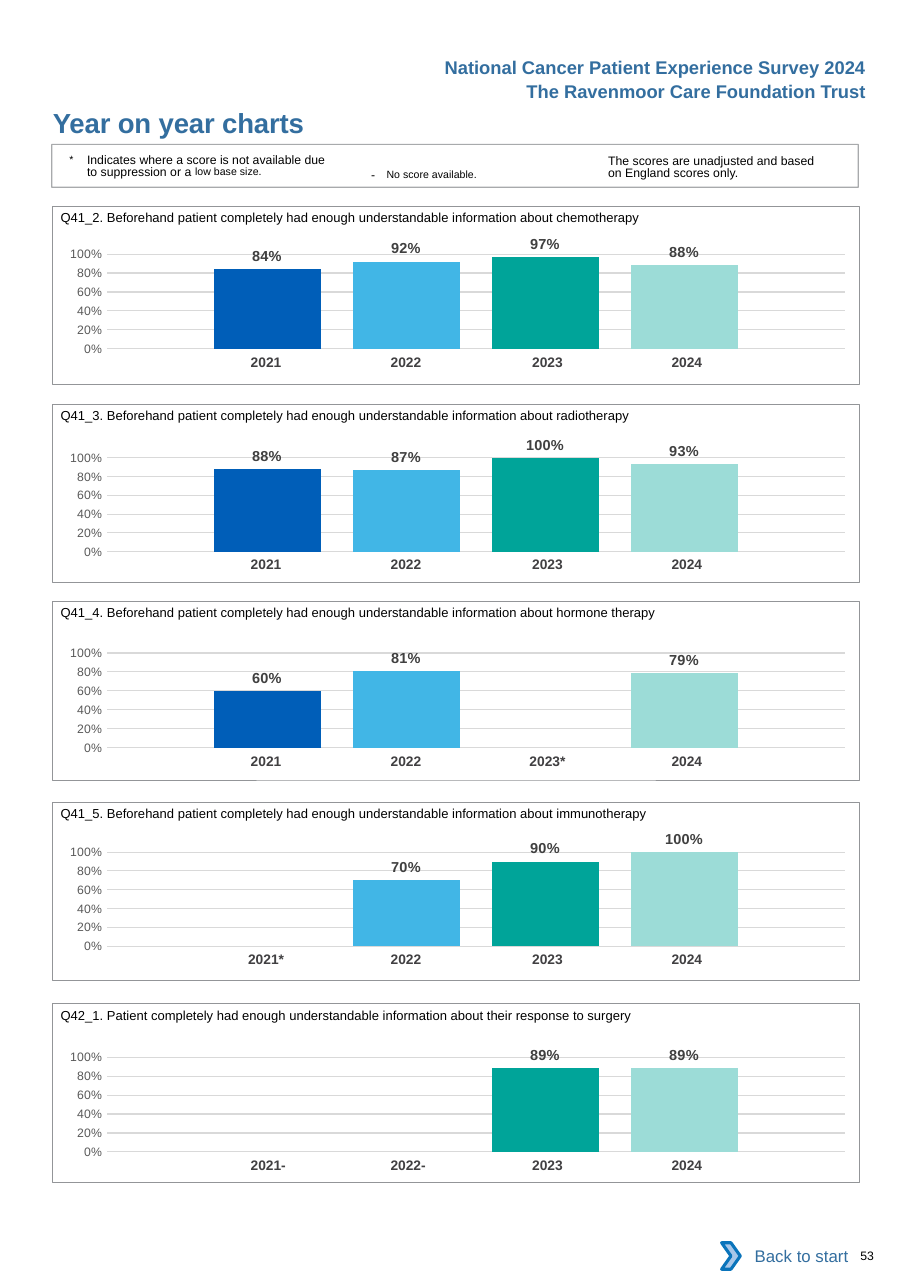
from lxml import etree
from pptx import Presentation
from pptx import util as u
from pptx.chart.data import CategoryChartData
from pptx.dml.color import RGBColor
from pptx.enum import chart as charts
from pptx.enum import shapes, text
from pptx.oxml import parse_xml
from pptx.oxml.ns import nsdecls, qn

BLACK = RGBColor(0x00, 0x00, 0x00)
WHITE = RGBColor(0xFF, 0xFF, 0xFF)
HEADING = RGBColor(0x33, 0x6E, 0x9F)
FRAME = RGBColor(0x93, 0x95, 0x98)
YEAR = RGBColor(0x41, 0x40, 0x42)
AXIS = RGBColor(0x59, 0x59, 0x59)
LABEL = RGBColor(0x40, 0x40, 0x40)
GRID = RGBColor(0xD9, 0xD9, 0xD9)
CHEVRON_FILL = RGBColor(0xA8, 0xC7, 0xE9)
CHEVRON_LINE = RGBColor(0x0A, 0x74, 0xBB)
BAR_COLORS = [RGBColor(0x00, 0x5E, 0xB8), RGBColor(0x41, 0xB6, 0xE6),
              RGBColor(0x00, 0xA4, 0x99), RGBColor(0x9C, 0xDC, 0xD7)]

FRAME_LEFT, FRAME_WIDTH, FRAME_HEIGHT = 0.48, 7.32, 1.62
CHART_LEFT, CHART_HEIGHT = 0.39, 1.29
YEARS_OFFSET = 1.05  # from the top of a chart to its row of years
YEAR_WIDTHS = [1.27, 1.27, 1.34, 1.27]
YEAR_RIGHT_INSETS = [0, 0, 0.04, 0.12]
PLOT = {"x": 0.079, "y": 0.145, "w": 0.915, "h": 0.666}

BEFOREHAND = "Beforehand patient completely had enough understandable information about "
# question, frame top, chart top, years, scores
PANELS = [
    ("Q41_2. " + BEFOREHAND + "chemotherapy", 1.87, 2.12,
     ["2021", "2022", "2023", "2024"], [0.84, 0.92, 0.97, 0.88]),
    ("Q41_3. " + BEFOREHAND + "radiotherapy", 3.67, 3.96,
     ["2021", "2022", "2023", "2024"], [0.88, 0.87, 1, 0.93]),
    ("Q41_4. " + BEFOREHAND + "hormone therapy", 5.46, 5.74,
     ["2021", "2022", "2023*", "2024"], [0.6, 0.81, None, 0.79]),
    ("Q41_5. " + BEFOREHAND + "immunotherapy", 7.28, 7.54,
     ["2021*", "2022", "2023", "2024"], [None, 0.7, 0.9, 1]),
    ("Q42_1. Patient completely had enough understandable information "
     "about their response to surgery", 9.11, 9.41,
     ["2021-", "2022-", "2023", "2024"], [None, None, 0.89, 0.89]),
]


def inches(*lengths):
    return [u.Inches(length) for length in lengths]


def set_insets(frame, insets):
    (frame.margin_left, frame.margin_top,
     frame.margin_right, frame.margin_bottom) = inches(*insets)


def style_font(font, size, color, bold=False):
    font.name = "Arial"
    font.size = u.Pt(size)
    font.bold = bold
    font.color.rgb = color


def add_span(para, words, size, color, bold=False, raised=0, spacing=0):
    """Add a run; raised is in percent and spacing in points."""
    span = para.add_run()
    span.text = words
    style_font(span.font, size, color, bold)
    properties = span.font._element
    if raised:
        properties.set("baseline", str(raised * 1000))
    if spacing:
        properties.set("spc", str(round(spacing * 100)))


def add_text(page, place, spans, insets=(0, 0, 0, 0),
             align=text.PP_ALIGN.LEFT, line_points=None, hanging=0):
    """Add a one-paragraph text box; each span holds the arguments of add_span."""
    box = page.shapes.add_textbox(*inches(*place))
    frame = box.text_frame
    frame.word_wrap = True
    set_insets(frame, insets)
    para = frame.paragraphs[0]
    para.alignment = align
    if line_points:
        para.line_spacing = u.Pt(line_points)
    if hanging:
        properties = para._p.get_or_add_pPr()
        properties.set("marL", str(u.Inches(hanging)))
        properties.set("indent", str(-u.Inches(hanging)))
    for span in spans:
        add_span(para, *span)


def add_shape(page, kind, place, fill=None, line=None, line_width=0.5):
    shape = page.shapes.add_shape(kind, *inches(*place))
    shape.shadow.inherit = False
    if fill is None:
        shape.fill.background()
    else:
        shape.fill.solid()
        shape.fill.fore_color.rgb = fill
    if line is None:
        shape.line.fill.background()
    else:
        shape.line.color.rgb = line
        shape.line.width = u.Pt(line_width)
    return shape


def place_plot(chart):
    """Fix the inner plot area at its share of the chart."""
    area = chart._chartSpace.chart.plotArea
    for layout in area.findall(qn("c:layout")):
        area.remove(layout)
    edges = "".join(f'<c:{side}Mode val="edge"/>' for side in "xy")
    shares = "".join(f'<c:{side} val="{share}"/>' for side, share in PLOT.items())
    area.insert(0, parse_xml(
        f'<c:layout {nsdecls("c")}><c:manualLayout><c:layoutTarget val="inner"/>'
        f'{edges}{shares}</c:manualLayout></c:layout>'))


def add_score_chart(page, top, scores):
    data = CategoryChartData(number_format="0%")
    data.categories = ["1"]
    for number, score in enumerate(scores, 1):
        data.add_series(f"Series {number}", [score])
    chart = page.shapes.add_chart(
        charts.XL_CHART_TYPE.COLUMN_CLUSTERED,
        *inches(CHART_LEFT, top, FRAME_WIDTH, CHART_HEIGHT), data).chart
    chart.has_legend = False
    chart.has_title = False
    chart.font.name = "Calibri"
    chart.font.size = u.Pt(10)
    chart.font.color.rgb = BLACK
    chart.category_axis.visible = False

    axis = chart.value_axis
    axis.minimum_scale, axis.maximum_scale, axis.major_unit = 0, 1, 0.2
    axis.major_tick_mark = charts.XL_TICK_MARK.NONE
    axis.format.line.fill.background()
    axis.major_gridlines.format.line.color.rgb = GRID
    axis.major_gridlines.format.line.width = u.Pt(0.75)
    axis.tick_labels.number_format = "0%"
    axis.tick_labels.number_format_is_linked = False
    style_font(axis.tick_labels.font, 8, AXIS)

    plot = chart.plots[0]
    plot.vary_by_categories = False
    plot.gap_width, plot.overlap = 200, -30
    for series, color in zip(plot.series, BAR_COLORS):
        series.format.fill.solid()
        series.format.fill.fore_color.rgb = color
        labels = series.data_labels
        labels.show_value = True
        labels.position = charts.XL_LABEL_POSITION.OUTSIDE_END
        labels.number_format = "0%"
        labels.number_format_is_linked = False
        style_font(labels.font, 9.5, LABEL, True)
    place_plot(chart)


def add_years(page, top, years):
    table = page.shapes.add_table(
        1, len(years), *inches(1.73, top, sum(YEAR_WIDTHS), 0.27)).table
    table.first_row = table.horz_banding = False
    style = table._tbl.tblPr.find(qn("a:tableStyleId"))
    style.text = "{2D5ABB26-0587-4C30-8999-92F81FD0307C}"  # no style, no grid
    for index, year in enumerate(years):
        table.columns[index].width = u.Inches(YEAR_WIDTHS[index])
        cell = table.cell(0, index)
        cell.fill.background()
        left = 0.14 if year.endswith("-") else 0.1
        set_insets(cell, (left, 0.05, YEAR_RIGHT_INSETS[index], 0.05))
        para = cell.text_frame.paragraphs[0]
        para.alignment = text.PP_ALIGN.CENTER
        add_span(para, year, 9, YEAR, True)


def add_panel(page, question, frame_top, chart_top, years, scores):
    add_score_chart(page, chart_top, scores)
    add_years(page, chart_top + YEARS_OFFSET, years)
    add_text(page, (0.55, frame_top - 0.06, 7.2, 0.24),
             [(question, 8.5, BLACK)], insets=(0, 0.09, 0, 0))
    add_shape(page, shapes.MSO_SHAPE.RECTANGLE,
              (FRAME_LEFT, frame_top, FRAME_WIDTH, FRAME_HEIGHT), line=FRAME)


def add_notes_box(page):
    add_text(page, (0.63, 1.38, 2.38, 0.3),
             [("*\t", 12, BLACK, False, 3),
              ("Indicates where a score is not available due to suppression or a ", 8, BLACK),
              ("low base size.", 12, BLACK, False, 7)],
             insets=(0, 0.03, 0, 0), line_points=8.1, hanging=0.16)
    add_text(page, (3.27, 1.41, 1.83, 0.24),
             [("- ", 8, BLACK, False, 0, 2.6),
              ("No score available.", 12, BLACK, False, 3)],
             insets=(0.1, 0.05, 0.1, 0.05))
    add_text(page, (5.52, 1.38, 1.95, 0.27),
             [("The scores are unadjusted and based on England scores only.", 8, BLACK)],
             insets=(0, 0.03, 0, 0), line_points=8.1)
    border = add_shape(page, shapes.MSO_SHAPE.RECTANGLE,
                       (0.47, 1.31, FRAME_WIDTH, 0.39), line=FRAME, line_width=0.75)
    color = border.line._ln.find(".//" + qn("a:srgbClr"))
    etree.SubElement(color, qn("a:alpha")).set("val", "80000")


def add_footer(page):
    button = add_shape(page, shapes.MSO_SHAPE.RECTANGLE, (6.62, 11.19, 1.18, 0.42), WHITE)
    button.text_frame.vertical_anchor = text.MSO_ANCHOR.MIDDLE
    para = button.text_frame.paragraphs[0]
    para.alignment = text.PP_ALIGN.RIGHT
    add_span(para, "Back to start", 11, HEADING)
    add_shape(page, shapes.MSO_SHAPE.CHEVRON, (6.55, 11.28, 0.17, 0.24),
              CHEVRON_FILL, CHEVRON_LINE, 2)
    add_text(page, (7.81, 11.33, 0.4, 0.13), [("53", 8, BLACK)])


def main():
    deck = Presentation()
    deck.slide_width, deck.slide_height = inches(8.26, 11.69)
    page = deck.slides.add_slide(deck.slide_layouts[6])
    for top, heading in [(0.46, "National Cancer Patient Experience Survey 2024"),
                         (0.68, "The Ravenmoor Care Foundation Trust")]:
        add_text(page, (2.96, top, 5, 0.3), [(heading, 12, HEADING, True)],
                 insets=(0.1, 0.05, 0.1, 0.05), align=text.PP_ALIGN.RIGHT)
    add_text(page, (0.48, 0.96, 4.5, 0.3),
             [("Year on year charts", 18, HEADING, True, 0, -0.1)])
    add_notes_box(page)
    for panel in PANELS:
        add_panel(page, *panel)
    add_footer(page)
    deck.save("out.pptx")


if __name__ == "__main__":
    main()
